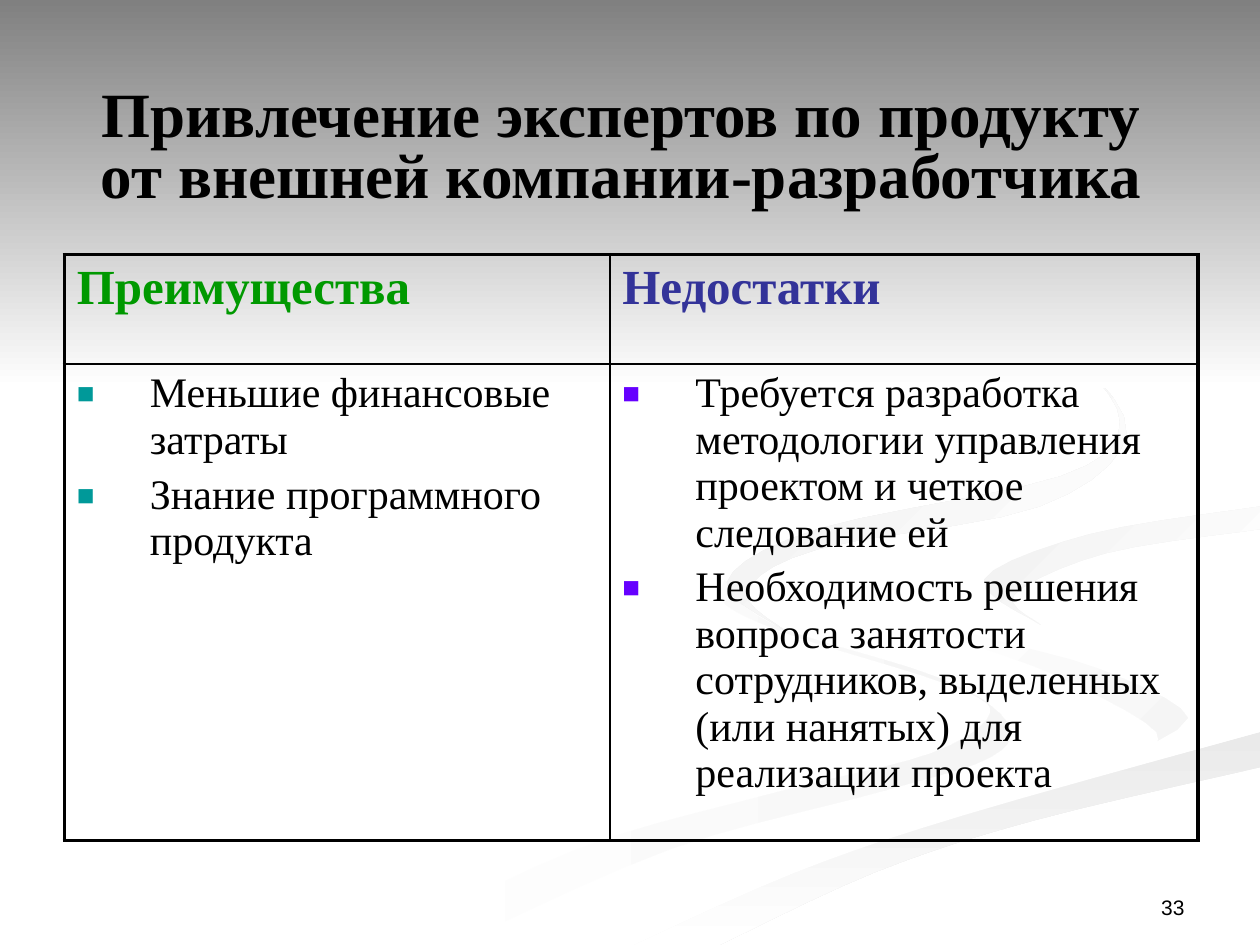
from lxml.etree import SubElement
from pptx import Presentation
from pptx.dml.color import RGBColor as RGB
from pptx.enum.shapes import MSO_SHAPE as SHAPE
from pptx.enum.text import MSO_ANCHOR as ANCHOR, PP_ALIGN as ALIGN
from pptx.oxml.ns import qn
from pptx.util import Inches, Pt

W, H = 10, 7.5
SERIF, SANS = "Times New Roman", "Arial"
COLORS = {"ink": "000000", "white": "FFFFFF", "top": "808080", "green": "009900",
          "blue": "333399", "teal": "009999", "violet": "6600FF",
          "mist": "F5F5F5", "fog": "EAEAEA", "haze": "F1F1F1", "smoke": "EDEDED"}
TITLE = "Привлечение экспертов по продукту от внешней\u00a0компании-разработчика"
PAGE = "33"
COLUMNS = [
    {"head": "Преимущества", "color": "green", "bullet": "teal", "width": 4.33,
     "items": ["Меньшие финансовые затраты", "Знание программного продукта"]},
    {"head": "Недостатки", "color": "blue", "bullet": "violet", "width": 4.67,
     "items": ["Требуется разработка методологии управления проектом и четкое следование ей",
               "Необходимость решения вопроса занятости сотрудников, выделенных "
               "(или нанятых) для реализации проекта"]},
]
ROWS = [0.87, 3.78]
STEPS = 5
RIBBONS = [
    ("white", "mist", 0, [
        [(5.75, 4.6), (5.76, 4.8), (6.31, 5.05), (7.52, 5.43), (7.86, 5.66),
         (7.39, 5.98), (6.16, 6.29), (4.58, 6.74), (3, 7.5)],
        [(3.61, 7.5), (5.32, 6.74), (7, 6.28), (7.86, 6.01), (7.99, 5.73),
         (7.45, 5.38), (6.14, 4.96), (5.75, 4.6)]]),
    ("white", "mist", 45, [
        [(7.24, 4.64), (7.46, 5), (8.38, 5.36), (9.18, 5.81), (8.94, 6.05)],
        [(8.94, 6.05), (9.43, 5.7), (8.7, 5.3), (7.58, 4.98), (7.24, 4.64)]]),
    ("fog", "white", 90, [
        [(10, 5.81), (7.64, 6.47), (6.3, 6.93), (5.03, 7.5)],
        [(5.71, 7.5), (6.95, 6.92), (8.21, 6.51), (10, 6.09)]]),
    ("white", "white", 0, [
        [(7.25, 4.64), (7.59, 4.98), (8.71, 5.3), (9.43, 5.7), (8.43, 6.18),
         (7.04, 6.55), (5.73, 7.03), (4.77, 7.5)],
        [(5.03, 7.5), (6.3, 6.93), (7.65, 6.47), (10, 5.81)],
        [(10, 5.38), (8.66, 5.09), (7.81, 4.63), (8.5, 4.27), (10, 4.02)],
        [(10, 3.87), (8.3, 4.15), (7.32, 4.46), (7.25, 4.64)]]),
    ("haze", "white", 45, [
        [(10, 4.02), (8.65, 4.24), (7.81, 4.6), (8.26, 4.96)],
        [(8.26, 4.96), (8.05, 4.72), (8.78, 4.39), (10, 4.2)]]),
    ("smoke", "white", 45, [
        [(7.62, 2.33), (8.46, 2.79), (8.89, 3.35), (8.42, 3.78), (6.49, 4.2),
         (5.77, 4.62), (6.22, 5)],
        [(6.22, 5), (5.93, 4.7), (6.49, 4.36), (8.25, 4.02), (8.94, 3.44),
         (8.43, 2.75), (7.62, 2.33)]]),
]


def rgb(name):
    return RGB.from_string(COLORS[name])


def style(p, size, color, font=SERIF, bold=False):
    for r in p.runs:
        r.font.name, r.font.size, r.font.bold = font, Pt(size), bold
        r.font.color.rgb = rgb(color)


def blend(a, b, c, d, t):
    return (2 * b + (c - a) * t + (2 * a - 5 * b + 4 * c - d) * t ** 2
            + (3 * b - a - 3 * c + d) * t ** 3) / 2


def smooth(edge):
    padded = [edge[0], *edge, edge[-1]]
    points = [tuple(blend(*axis, step / STEPS) for axis in zip(*padded[i:i + 4]))
              for i in range(len(edge) - 1) for step in range(STEPS)]
    return [(min(x, W), min(y, H)) for x, y in points + [edge[-1]]]


def paint(sp, start, end, angle):
    sp.shadow.inherit = False
    sp.line.fill.background()
    if start == end:
        sp.fill.solid()
        sp.fill.fore_color.rgb = rgb(start)
        return
    sp.fill.gradient()
    sp.fill.gradient_angle = (360 - angle) % 360
    for stop, name in zip(sp.fill.gradient_stops, (start, end)):
        stop.color.rgb = rgb(name)


def add_ribbon(slide, start, end, angle, edges):
    points = [(Inches(x), Inches(y)) for edge in edges for x, y in smooth(edge)]
    builder = slide.shapes.build_freeform(*points[0])
    builder.add_line_segments(points[1:], close=True)
    paint(builder.convert_to_shape(), start, end, angle)


def add_text(slide, box, text, anchor, align):
    tf = slide.shapes.add_textbox(*map(Inches, box)).text_frame
    tf.word_wrap, tf.vertical_anchor, tf.text = True, anchor, text
    p = tf.paragraphs[0]
    p.alignment = align
    return p


def add_border(cell, side, width):
    ln = SubElement(cell._tc.get_or_add_tcPr(), qn(f"a:ln{side}"), w=str(Pt(width)))
    fill = SubElement(ln, qn("a:solidFill"))
    SubElement(fill, qn("a:srgbClr"), val=COLORS["ink"])


def space_before(p, percent):
    spacing = SubElement(p._p.get_or_add_pPr(), qn("a:spcBef"))
    SubElement(spacing, qn("a:spcPct"), val=str(percent * 1000))


def add_bullet(p, color):
    props = p._p.get_or_add_pPr()
    props.set("marL", str(Inches(0.58)))
    props.set("indent", str(-Inches(0.58)))
    SubElement(SubElement(props, qn("a:buClr")), qn("a:srgbClr"), val=COLORS[color])
    SubElement(props, qn("a:buSzPct"), val="70000")
    SubElement(props, qn("a:buFont"), typeface=SANS)
    SubElement(props, qn("a:buChar"), char="■")


def fill_cell(cell, lines, size, color, bold=False, bullet=None):
    cell.text_frame.text = "\n".join(lines)
    for p in cell.text_frame.paragraphs:
        space_before(p, 20)
        if bullet:
            add_bullet(p, bullet)
        style(p, size, color, bold=bold)


def add_comparison(slide):
    widths = [col["width"] for col in COLUMNS]
    box = map(Inches, (0.51, 2.02, sum(widths), sum(ROWS)))
    table = slide.shapes.add_table(len(ROWS), len(COLUMNS), *box).table
    table.first_row = table.horz_banding = False
    for row, height in zip(table.rows, ROWS):
        row.height = Inches(height)
    for c, col in enumerate(COLUMNS):
        table.columns[c].width = Inches(col["width"])
        fill_cell(table.cell(0, c), [col["head"]], 28, col["color"], bold=True)
        fill_cell(table.cell(1, c), col["items"], 24, "ink", bullet=col["bullet"])
        for r in range(len(ROWS)):
            cell = table.cell(r, c)
            outer = {"L": c == 0, "R": c == len(COLUMNS) - 1,
                     "T": r == 0, "B": r == len(ROWS) - 1}
            for side, edge in outer.items():
                add_border(cell, side, 2.25 if edge else 1)
            cell.fill.background()


def main():
    """Build the slide comparing pros and cons of outside product experts."""
    prs = Presentation()
    prs.slide_width, prs.slide_height = Inches(W), Inches(H)
    slide = prs.slides.add_slide(prs.slide_layouts[6])
    slide.background.fill.solid()
    slide.background.fill.fore_color.rgb = rgb("white")
    for ribbon in RIBBONS:
        add_ribbon(slide, *ribbon)
    band = slide.shapes.add_shape(SHAPE.RECTANGLE, 0, 0, Inches(W), Inches(3.08))
    paint(band, "top", "white", 90)
    p = add_text(slide, (7.17, 6.83, 2.33, 0.52), PAGE, ANCHOR.BOTTOM, ALIGN.RIGHT)
    style(p, 12, "ink", SANS)
    p = add_text(slide, (0.43, 0.44, 9, 1.5), TITLE, ANCHOR.MIDDLE, ALIGN.CENTER)
    p.line_spacing = 0.8
    style(p, 36, "ink", bold=True)
    add_comparison(slide)
    prs.save("out.pptx")


if __name__ == "__main__":
    main()
